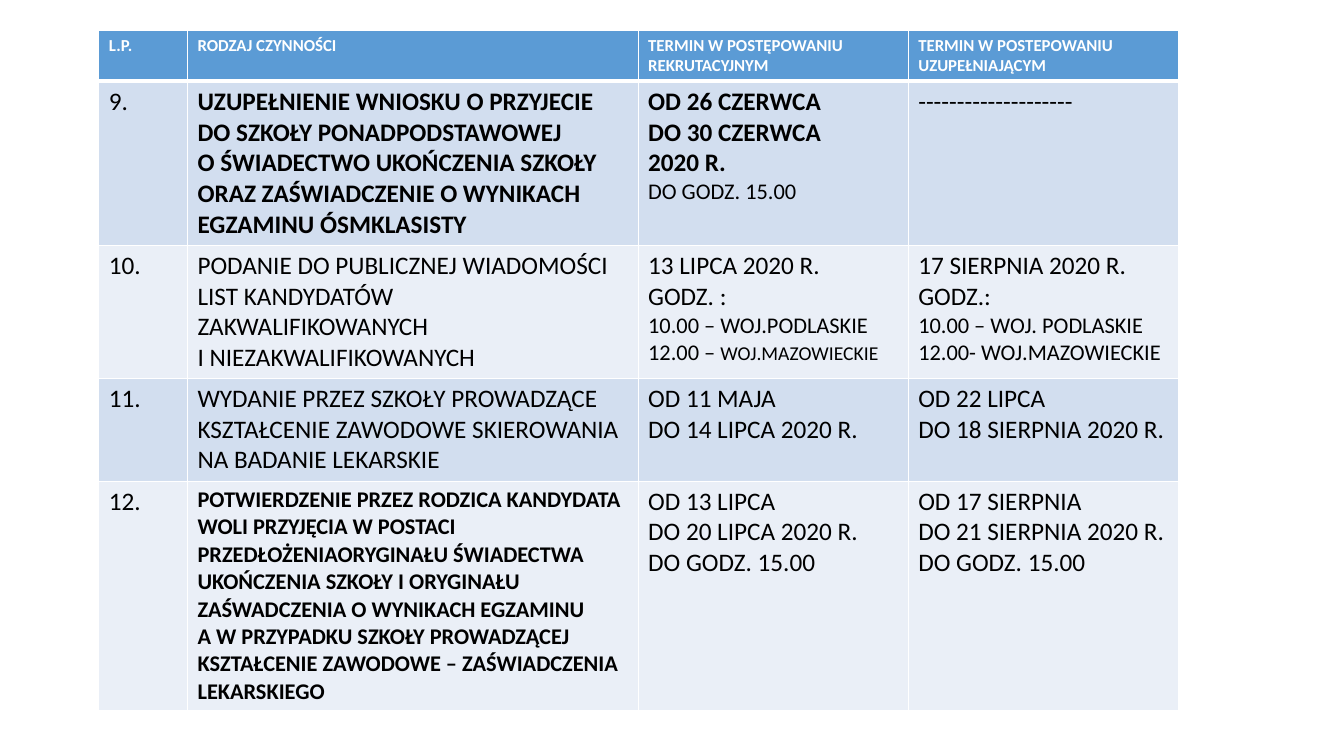
from lxml.etree import SubElement
from pptx import Presentation
from pptx.dml.color import RGBColor
from pptx.oxml.ns import qn
from pptx.util import Inches, Pt

WHITE = RGBColor(0xFF, 0xFF, 0xFF)
BLACK = RGBColor(0x00, 0x00, 0x00)
HEADER_BLUE = RGBColor(0x5B, 0x9B, 0xD5)
BAND_DARK = RGBColor(0xD2, 0xDE, 0xEF)
BAND_LIGHT = RGBColor(0xEA, 0xEF, 0xF7)

HEADER_SIZE, BODY_SIZE, SMALL_SIZE, TINY_SIZE = 12, 18, 16, 14
THIN, THICK = 1, 3

TABLE_LEFT, TABLE_TOP = 7.35, 4
COLUMN_SHARES = [6.6, 33.53, 20.1, 20.1]
ROW_SHARES = [6.67, 21.33, 17.6, 13.6, 29.33]


def span(text, size=BODY_SIZE, bold=False):
    return text, size, bold


def plain(*lines):
    return [[span(line)] for line in lines]


HEADINGS = [
    "L.P.",
    "RODZAJ CZYNNOŚCI",
    "TERMIN W POSTĘPOWANIU REKRUTACYJNYM",
    "TERMIN W POSTEPOWANIU UZUPEŁNIAJĄCYM",
]

SCHEDULE = [
    [
        plain("9."),
        [[span("UZUPEŁNIENIE WNIOSKU O PRZYJECIE DO SZKOŁY PONADPODSTAWOWEJ \n"
               "O ŚWIADECTWO UKOŃCZENIA SZKOŁY ORAZ ZAŚWIADCZENIE O WYNIKACH "
               "EGZAMINU ÓSMKLASISTY", bold=True)]],
        [[span("OD 26 CZERWCA \nDO 30 CZERWCA \n2020 R. \n", bold=True),
          span("DO GODZ. 15.00", SMALL_SIZE)]],
        plain("--------------------"),
    ],
    [
        plain("10."),
        plain("PODANIE DO PUBLICZNEJ WIADOMOŚCI LIST KANDYDATÓW "
              "ZAKWALIFIKOWANYCH \nI NIEZAKWALIFIKOWANYCH"),
        plain("13 LIPCA 2020 R. \nGODZ. :") + [
            [span("10.00 – WOJ.PODLASKIE", SMALL_SIZE)],
            [span("12.00 – ", SMALL_SIZE), span("WOJ.MAZOWIECKIE", TINY_SIZE)],
        ],
        plain("17 SIERPNIA 2020 R.", "GODZ.:") + [
            [span("10.00 – WOJ. PODLASKIE", SMALL_SIZE)],
            [span("12.00- WOJ.MAZOWIECKIE", SMALL_SIZE)],
        ],
    ],
    [
        plain("11."),
        plain("WYDANIE PRZEZ SZKOŁY PROWADZĄCE KSZTAŁCENIE ZAWODOWE "
              "SKIEROWANIA NA BADANIE LEKARSKIE"),
        plain("OD 11 MAJA \nDO 14 LIPCA 2020 R."),
        plain("OD 22 LIPCA \nDO 18 SIERPNIA 2020 R."),
    ],
    [
        plain("12."),
        [[span("POTWIERDZENIE PRZEZ RODZICA KANDYDATA WOLI PRZYJĘCIA W POSTACI "
               "PRZEDŁOŻENIAORYGINAŁU ŚWIADECTWA UKOŃCZENIA SZKOŁY I ORYGINAŁU "
               "ZAŚWADCZENIA O WYNIKACH EGZAMINU \n"
               "A W PRZYPADKU SZKOŁY PROWADZĄCEJ KSZTAŁCENIE ZAWODOWE – "
               "ZAŚWIADCZENIA LEKARSKIEGO", SMALL_SIZE, True)]],
        plain("OD 13 LIPCA \nDO 20 LIPCA 2020 R. \nDO GODZ. 15.00"),
        plain("OD 17 SIERPNIA \nDO 21 SIERPNIA 2020 R. DO GODZ. 15.00"),
    ],
]


class SlideBuilder:
    font_name = "Calibri"

    def __init__(self, presentation):
        self.width = presentation.slide_width
        self.height = presentation.slide_height
        self.slide = presentation.slides.add_slide(presentation.slide_layouts[6])

    def across(self, share):
        return round(self.width * share / 100)

    def down(self, share):
        return round(self.height * share / 100)

    def add_table(self, left, top, column_shares, row_shares):
        table = self.slide.shapes.add_table(
            len(row_shares), len(column_shares),
            self.across(left), self.down(top),
            self.across(sum(column_shares)), self.down(sum(row_shares))).table
        for column, share in zip(table.columns, column_shares):
            column.width = self.across(share)
        for row, share in zip(table.rows, row_shares):
            row.height = self.down(share)
        return table

    def fill_cell(self, cell, paragraphs, fill, color, top=THIN, bottom=THIN):
        self.add_borders(cell, {"lnL": THIN, "lnR": THIN, "lnT": top, "lnB": bottom})
        cell.fill.solid()
        cell.fill.fore_color.rgb = fill
        for index, spans in enumerate(paragraphs):
            frame = cell.text_frame
            paragraph = frame.add_paragraph() if index else frame.paragraphs[0]
            self.write_spans(paragraph, spans, color)

    def write_spans(self, paragraph, spans, color):
        first_text, first_size, first_bold = spans[0]
        paragraph.text = first_text
        for line_break in paragraph.line_breaks if hasattr(paragraph, "line_breaks") else paragraph._p.findall(qn("a:br")):
            SubElement(line_break, qn("a:rPr"), sz=str(first_size * 100))
        for run in paragraph.runs:
            self.format_run(run, first_size, first_bold, color)
        for text, size, bold in spans[1:]:
            run = paragraph.add_run()
            run.text = text
            self.format_run(run, size, bold, color)

    def format_run(self, run, size, bold, color):
        run.font.name = self.font_name
        run.font.size = Pt(size)
        run.font.bold = bold
        run.font.color.rgb = color

    def add_borders(self, cell, widths):
        properties = cell._tc.get_or_add_tcPr()
        for side, width in widths.items():
            line = SubElement(properties, qn(f"a:{side}"), w=str(Pt(width)))
            solid_fill = SubElement(line, qn("a:solidFill"))
            SubElement(solid_fill, qn("a:srgbClr"), val=str(WHITE))


def main():
    presentation = Presentation()
    presentation.slide_width = Inches(13.33)
    presentation.slide_height = Inches(7.5)
    builder = SlideBuilder(presentation)
    table = builder.add_table(TABLE_LEFT, TABLE_TOP, COLUMN_SHARES, ROW_SHARES)
    for column, heading in enumerate(HEADINGS):
        builder.fill_cell(table.cell(0, column), [[span(heading, HEADER_SIZE, True)]],
                          HEADER_BLUE, WHITE, bottom=THICK)
    for row, entries in enumerate(SCHEDULE, start=1):
        band = BAND_DARK if row % 2 else BAND_LIGHT
        top = THICK if row == 1 else THIN
        for column, paragraphs in enumerate(entries):
            builder.fill_cell(table.cell(row, column), paragraphs, band, BLACK, top=top)
    presentation.save("out.pptx")


if __name__ == "__main__":
    main()
